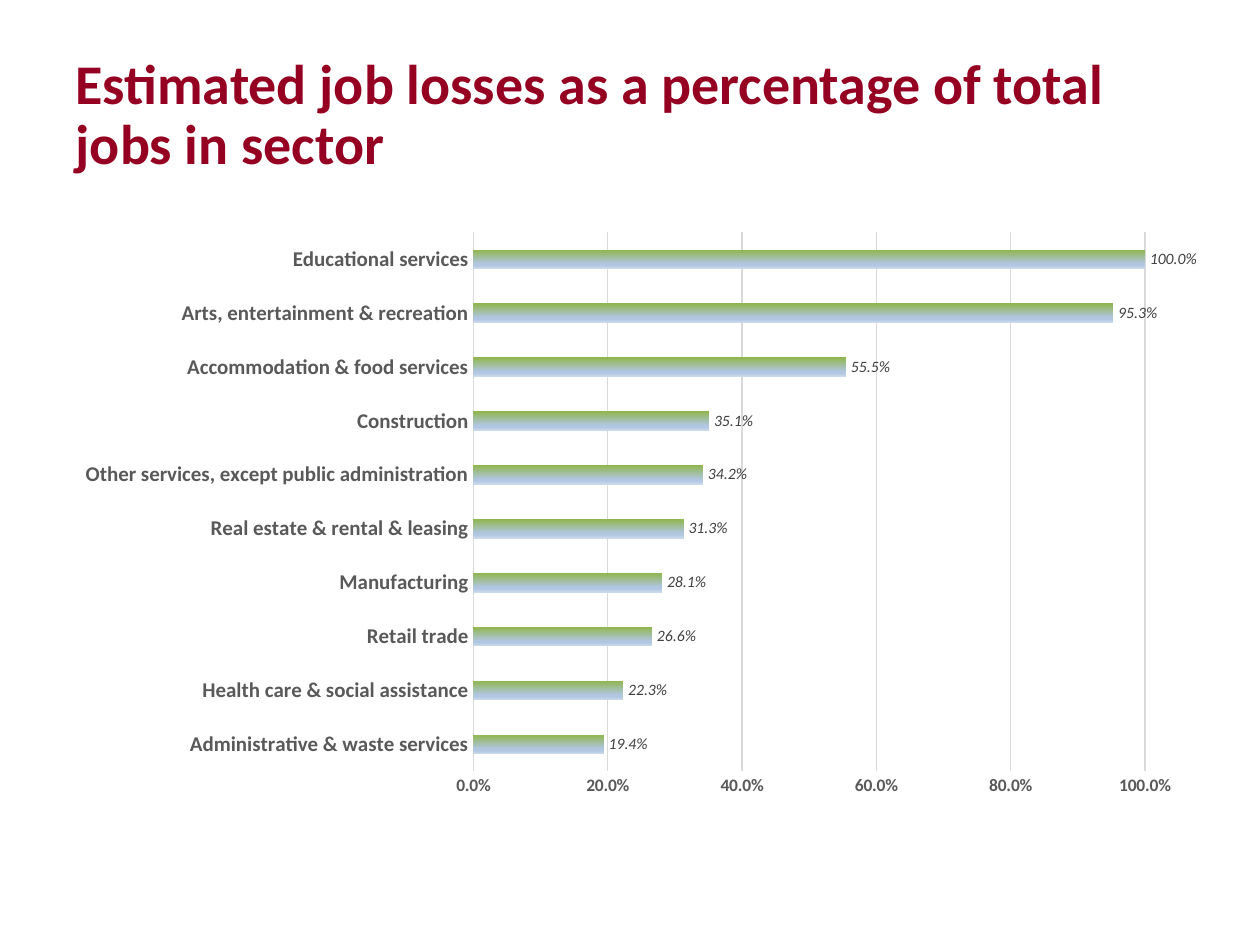
from lxml import etree
from pptx import Presentation
from pptx.chart.data import CategoryChartData
from pptx.dml.color import RGBColor
from pptx.enum.chart import XL_CHART_TYPE, XL_LABEL_POSITION, XL_TICK_MARK
from pptx.enum.text import MSO_ANCHOR, MSO_AUTO_SIZE, PP_ALIGN
from pptx.oxml.ns import qn
from pptx.util import Pt

BAR_CLUSTERED = XL_CHART_TYPE.BAR_CLUSTERED
OUTSIDE_END = XL_LABEL_POSITION.OUTSIDE_END
NO_TICK = XL_TICK_MARK.NONE
MIDDLE = MSO_ANCHOR.MIDDLE
NO_AUTOFIT = MSO_AUTO_SIZE.NONE
LEFT = PP_ALIGN.LEFT

CRIMSON = RGBColor(0x95, 0x00, 0x22)
BLACK = RGBColor(0x00, 0x00, 0x00)
AXIS_GREY = RGBColor(0x59, 0x59, 0x59)
LABEL_GREY = RGBColor(0x40, 0x40, 0x40)
GRID_GREY = RGBColor(0xD9, 0xD9, 0xD9)
GREEN = RGBColor(0x8F, 0xB5, 0x4B)
BLUE = RGBColor(0xB0, 0xC6, 0xE1)
PALE_BLUE = RGBColor(0xCA, 0xD9, 0xEB)

FONT = "Calibri"
PERCENT = "0.0%"
BAR_STOPS = [(0, GREEN), (74, BLUE), (83, BLUE), (100, PALE_BLUE)]
JOB_LOSSES = [
    ("Administrative & waste services", 0.194),
    ("Health care & social assistance", 0.223),
    ("Retail trade", 0.266),
    ("Manufacturing", 0.281),
    ("Real estate & rental & leasing", 0.313),
    ("Other services, except public administration", 0.342),
    ("Construction", 0.351),
    ("Accommodation & food services", 0.555),
    ("Arts, entertainment & recreation", 0.953),
    ("Educational services", 1),
]


def style_font(font, size, color, bold=False, italic=False):
    font.name = FONT
    font.size = Pt(size)
    font.color.rgb = color
    font.bold = bold
    font.italic = italic


deck = Presentation()
deck.slide_width = Pt(720)
deck.slide_height = Pt(540)
page = deck.slides.add_slide(deck.slide_layouts[5])

title = page.shapes.title
title.left, title.top, title.width, title.height = Pt(36), Pt(21.6), Pt(648), Pt(90)
frame = title.text_frame
frame.text = "Estimated job losses as a percentage of total jobs in sector"
frame.word_wrap = True
frame.auto_size = NO_AUTOFIT
frame.vertical_anchor = MIDDLE
para = frame.paragraphs[0]
para.alignment = LEFT
para.line_spacing = 0.9
style_font(para.runs[0].font, 32, CRIMSON, bold=True)

data = CategoryChartData(number_format=PERCENT)
data.categories = [sector for sector, share in JOB_LOSSES]
data.add_series("Series 1", [share for sector, share in JOB_LOSSES])
chart = page.shapes.add_chart(
    BAR_CLUSTERED, Pt(36), Pt(126), Pt(648), Pt(335.5), data
).chart
chart.has_legend = False
chart.has_title = False
style_font(chart.font, 10, BLACK)

sector_axis = chart.category_axis
share_axis = chart.value_axis
for axis, size in [(sector_axis, 12), (share_axis, 10)]:
    axis.major_tick_mark = NO_TICK
    axis.minor_tick_mark = NO_TICK
    style_font(axis.tick_labels.font, size, AXIS_GREY, bold=True)

share_axis.minimum_scale = 0
share_axis.maximum_scale = 1
share_axis.major_unit = 0.2
share_axis.tick_labels.number_format = PERCENT
share_axis.tick_labels.number_format_is_linked = False
share_axis.format.line.fill.background()
share_axis.has_major_gridlines = True
for line in [sector_axis.format.line, share_axis.major_gridlines.format.line]:
    line.color.rgb = GRID_GREY
    line.width = Pt(0.75)

plot = chart.plots[0]
plot.gap_width = 182
plot.vary_by_categories = False
bars = plot.series[0]
bars.invert_if_negative = False
bars.format.fill.gradient()
bars.format.fill.gradient_angle = 270
stop_list = next(chart.element.iter(qn("a:gsLst")))
for stop in list(stop_list):
    stop_list.remove(stop)
for position, color in BAR_STOPS:
    stop = etree.SubElement(stop_list, qn("a:gs"), pos=str(position * 1000))
    etree.SubElement(stop, qn("a:srgbClr"), val=str(color))

labels = bars.data_labels
labels.show_value = True
labels.position = OUTSIDE_END
labels.number_format = PERCENT
labels.number_format_is_linked = False
style_font(labels.font, 9, LABEL_GREY, italic=True)

deck.save("out.pptx")
